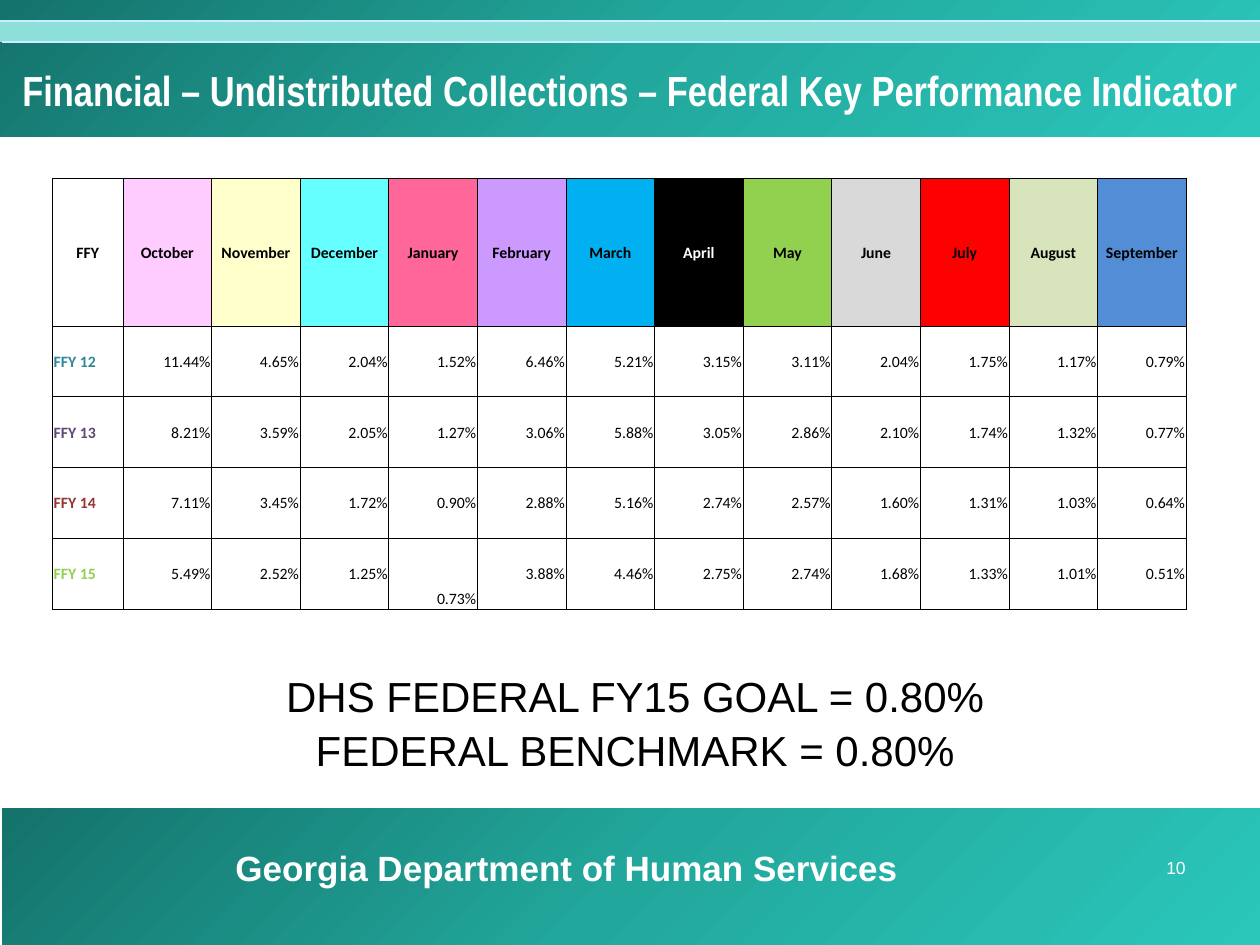
import copy

import lxml.etree
import pptx
import pptx.dml.color
import pptx.enum.shapes
import pptx.enum.text
import pptx.oxml
import pptx.oxml.ns
import pptx.util

Pt = pptx.util.Pt
RGB = pptx.dml.color.RGBColor
qn = pptx.oxml.ns.qn
ALIGN = pptx.enum.text.PP_ALIGN
ANCHOR = pptx.enum.text.MSO_ANCHOR

WHITE = RGB(0xFF, 0xFF, 0xFF)
BLACK = RGB(0, 0, 0)
PALE = RGB(0x8D, 0xDF, 0xD9)
ICE = RGB(0xCC, 0xEC, 0xFF)
TEALS = (RGB(0x14, 0x73, 0x6B), RGB(0x22, 0xA7, 0x9C), RGB(0x2B, 0xC7, 0xBB))

MONTHS = (
    ("October", RGB(0xFF, 0xCC, 0xFF)),
    ("November", RGB(0xFF, 0xFF, 0xCC)),
    ("December", RGB(0x66, 0xFF, 0xFF)),
    ("January", RGB(0xFF, 0x66, 0x99)),
    ("February", RGB(0xCC, 0x99, 0xFF)),
    ("March", RGB(0x00, 0xB0, 0xF0)),
    ("April", BLACK),
    ("May", RGB(0x92, 0xD0, 0x50)),
    ("June", RGB(0xD9, 0xD9, 0xD9)),
    ("July", RGB(0xFF, 0x00, 0x00)),
    ("August", RGB(0xD8, 0xE4, 0xBC)),
    ("September", RGB(0x53, 0x8D, 0xD5)),
)
YEARS = (
    ("FFY 12", RGB(0x31, 0x86, 0x9B),
     (11.44, 4.65, 2.04, 1.52, 6.46, 5.21, 3.15, 3.11, 2.04, 1.75, 1.17, 0.79)),
    ("FFY 13", RGB(0x60, 0x49, 0x7A),
     (8.21, 3.59, 2.05, 1.27, 3.06, 5.88, 3.05, 2.86, 2.10, 1.74, 1.32, 0.77)),
    ("FFY 14", RGB(0x96, 0x36, 0x34),
     (7.11, 3.45, 1.72, 0.90, 2.88, 5.16, 2.74, 2.57, 1.60, 1.31, 1.03, 0.64)),
    ("FFY 15", RGB(0x92, 0xD0, 0x50),
     (5.49, 2.52, 1.25, 0.73, 3.88, 4.46, 2.75, 2.74, 1.68, 1.33, 1.01, 0.51)),
)


class Deck:
    """Holds the style and the current slide, and draws each kind of element."""

    font = "Arial"
    grid = "Calibri"

    def __init__(self, wide, high):
        self.file = pptx.Presentation()
        self.file.slide_width = Pt(wide)
        self.file.slide_height = Pt(high)
        self.slide = self.file.slides.add_slide(self.file.slide_layouts[6])

    def band(self, x, y, w, h, tones):
        kind = pptx.enum.shapes.MSO_SHAPE.RECTANGLE
        shape = self.slide.shapes.add_shape(kind, Pt(x), Pt(y), Pt(w), Pt(h))
        shape.shadow.inherit = False
        shape.line.fill.background()
        if len(tones) == 1:
            shape.fill.solid()
            shape.fill.fore_color.rgb = tones[0]
            return
        shape.fill.gradient()
        shape.fill.gradient_angle = 315
        stops = shape._element.spPr.find(".//" + qn("a:gsLst"))
        stops.append(copy.deepcopy(stops[-1]))
        last = len(tones) - 1
        for i, (stop, tone) in enumerate(zip(shape.fill.gradient_stops, tones)):
            stop.color.rgb = tone
            stop.position = i / last

    def rule(self, x, y, end):
        kind = pptx.enum.shapes.MSO_CONNECTOR.STRAIGHT
        line = self.slide.shapes.add_connector(kind, Pt(x), Pt(y), Pt(end), Pt(y))
        line.line.color.rgb = ICE
        line.line.width = Pt(1.5)
        lxml.etree.SubElement(line._element.spPr, qn("a:effectLst"))

    def run(self, para, text, size, tone, bold=False, font=None):
        run = para.add_run()
        run.text = text
        run.font.name = font or self.font
        run.font.size = Pt(size)
        run.font.bold = bold
        run.font.color.rgb = tone

    def text(self, x, y, w, h, lines, size, tone, bold=False, font=None,
             align=ALIGN.CENTER, anchor=ANCHOR.TOP, space=1, side=7.2):
        box = self.slide.shapes.add_textbox(Pt(x), Pt(y), Pt(w), Pt(h))
        frame = box.text_frame
        frame.word_wrap = True
        frame.vertical_anchor = anchor
        frame.margin_left = frame.margin_right = Pt(side)
        for i, line in enumerate(lines):
            para = frame.add_paragraph() if i else frame.paragraphs[0]
            para.alignment = align
            para.line_spacing = space
            self.run(para, line, size, tone, bold, font)

    def cell(self, cell, text, align, tone=BLACK, bold=False, fill=None,
             anchor=ANCHOR.MIDDLE):
        cell.vertical_anchor = anchor
        cell.margin_left = cell.margin_right = cell.margin_top = Pt(0.7)
        cell.margin_bottom = Pt(0)
        if fill is None:
            cell.fill.background()
        else:
            cell.fill.solid()
            cell.fill.fore_color.rgb = fill
        props = cell._tc.get_or_add_tcPr()
        for i, edge in enumerate("LRTB"):
            line = lxml.etree.Element(qn("a:ln" + edge), w=str(Pt(0.5)))
            paint = lxml.etree.SubElement(line, qn("a:solidFill"))
            lxml.etree.SubElement(paint, qn("a:srgbClr"), val=str(BLACK))
            props.insert(i, line)
        para = cell.text_frame.paragraphs[0]
        para.alignment = align
        self.run(para, text, 9, tone, bold, self.grid)

    def table(self, x, y, cols, rows):
        frame = self.slide.shapes.add_table(
            len(rows), len(cols), Pt(x), Pt(y), Pt(sum(cols)), Pt(sum(rows)))
        table = frame.table
        table.first_row = table.horz_banding = False
        for col, wide in zip(table.columns, cols):
            col.width = Pt(wide)
        for row, high in zip(table.rows, rows):
            row.height = Pt(high)
        return table


def main():
    deck = Deck(720, 540)
    deck.band(1.2, 462, 720, 78, TEALS)
    deck.band(0, 0, 720, 78, TEALS)
    deck.band(0, 12, 720, 12, [PALE])
    deck.rule(0, 12, 720)
    deck.rule(1.2, 24, 720)

    deck.text(0, 24, 720, 54,
              ["Financial – Undistributed Collections – Federal Key Performance Indicator"],
              24, WHITE, True, "Arial Narrow", anchor=ANCHOR.MIDDLE, side=3)
    deck.text(127.5, 480, 448.5, 32, ["Georgia Department of Human Services"],
              20, WHITE, True, align=ALIGN.LEFT)
    deck.text(648, 486, 48, 30, ["10"], 10, WHITE)
    deck.text(30, 378, 666, 65.5,
              ["DHS FEDERAL FY15 GOAL = 0.80%", "FEDERAL BENCHMARK = 0.80%"],
              24, BLACK, space=1.06)

    table = deck.table(30, 102, [40.3] + [50.64] * len(MONTHS),
                       [84.4] + [40.4] * len(YEARS))
    deck.cell(table.cell(0, 0), "FFY", ALIGN.CENTER, bold=True)
    for c, (month, fill) in enumerate(MONTHS, 1):
        tone = WHITE if fill == BLACK else BLACK
        deck.cell(table.cell(0, c), month, ALIGN.CENTER, tone, True, fill)
    for r, (year, tone, rates) in enumerate(YEARS, 1):
        deck.cell(table.cell(r, 0), year, ALIGN.LEFT, tone, True)
        for c, rate in enumerate(rates, 1):
            low = (year, MONTHS[c - 1][0]) == ("FFY 15", "January")
            deck.cell(table.cell(r, c), f"{rate:.2f}%", ALIGN.RIGHT,
                      anchor=ANCHOR.BOTTOM if low else ANCHOR.MIDDLE)

    deck.file.save("out.pptx")


if __name__ == "__main__":
    main()
